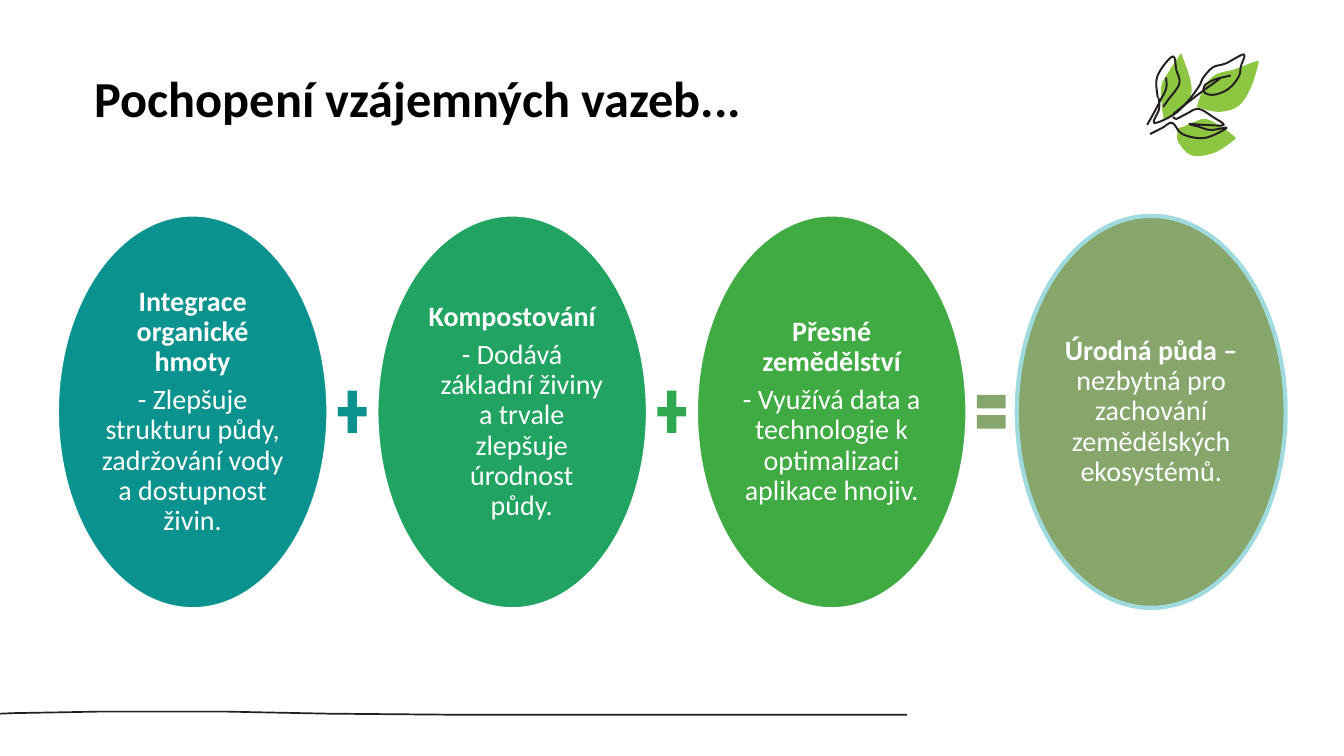
from lxml import etree
from pptx import Presentation
from pptx.dml.color import RGBColor
from pptx.enum.shapes import MSO_SHAPE
from pptx.enum.text import MSO_ANCHOR, PP_ALIGN
from pptx.oxml.ns import qn
from pptx.util import Pt

FONT = "Calibri"
INK = "231F20"
LEAF_GREEN = "8DC641"
WHITE = "FFFFFF"
FIRST_LEFT, STEP = 41.6, 228.24

FACTORS = [
    ("0A938E", WHITE, 1, [
        [("Integrace organické hmoty", True)],
        [("- Zlepšuje strukturu půdy, zadržování vody a dostupnost živin.", False)],
    ]),
    ("21A362", WHITE, 1, [
        [("Kompostování", True)],
        [("- Dodává základní živiny a trvale zlepšuje úrodnost půdy.", False)],
    ]),
    ("40AB43", WHITE, 1, [
        [("Přesné zemědělství", True)],
        [("- Využívá data a technologie k optimalizaci aplikace hnojiv.", False)],
    ]),
    ("86A66B", "9FDADF", 3, [
        [("Úrodná půda – ", True), ("nezbytná pro zachování zemědělských ekosystémů.", False)],
    ]),
]
INDENTED_FACTOR = 1

OPERATORS = [
    (MSO_SHAPE.MATH_PLUS, "0A938E"),
    (MSO_SHAPE.MATH_PLUS, "2FA850"),
    (MSO_SHAPE.MATH_EQUAL, "86A66B"),
]

LEAVES = [
    [(834.5, 84.2), (851, 67), (844.6, 40.3), (841.7, 41), (834.5, 51.8),
     (829.4, 62.6), (830.9, 82.8), (832.3, 85)],
    [(884.9, 75.6), (893.5, 62.6), (898.6, 46.1), (897.1, 43.9), (881.3, 49.7),
     (868.3, 53.3), (860.4, 61.9), (855.4, 74.9), (856.8, 77), (871.2, 79.9)],
    [(881.3, 100.1), (881.3, 97.2), (870.5, 89.3), (861.1, 85), (853.2, 87.1),
     (844.6, 90.7), (841, 92.2), (841, 95), (841.7, 101.5), (851, 110.9),
     (866.9, 109.3)],
]

TWIG_STROKES = [
    [(827, 69.8), (826, 57.6), (830.2, 48.2), (838.1, 40.3), (840.2, 49.7),
     (842.4, 59.8), (834.5, 71.3), (830.9, 76.3)],
    [(833, 55.4), (833, 63.4), (828.7, 72), (826.6, 76.3), (819.4, 89.3)],
    [(827.6, 69.8), (828, 77.8), (824.4, 87.8), (838.1, 82.1), (848.2, 72.7),
     (856.8, 61.2), (859, 56.2), (866.2, 48.2), (875.5, 45.4), (888.5, 38.9),
     (886.3, 47.5), (884.9, 54.7), (877.7, 63.4), (867.6, 67.7), (860.4, 66.2),
     (860.4, 61.2), (867.6, 56.9), (879.1, 54)],
    [(838.1, 81.4), (848.2, 73.4), (860.4, 64.1), (871.2, 56.5)],
    [(838.1, 83.5), (840.2, 85), (847.4, 81.4), (856.1, 77.8), (866.2, 83.5),
     (874.1, 89.3), (861.1, 89.3), (849.6, 88.6), (856.8, 90.7), (864.7, 92.9),
     (876.2, 91.4), (860.4, 98.6), (844.6, 95.8), (837.4, 87.8), (830.2, 91.4),
     (821.5, 95.8)],
]

GROUND_TOP = [(0, 509.2), (10, 508.8), (72, 507.7), (160.6, 507.7),
              (235, 509.2), (319, 509.9), (648, 509.9)]
GROUND_THICKNESS = 1.2


def color(value):
    return RGBColor.from_string(value)


def paint(shape, fill=None, line=None, width=1):
    shape.shadow.inherit = False
    if fill:
        shape.fill.solid()
        shape.fill.fore_color.rgb = color(fill)
    else:
        shape.fill.background()
    if line:
        shape.line.color.rgb = color(line)
        shape.line.width = Pt(width)
    else:
        shape.line.fill.background()


def style_span(span, size, value, bold):
    span.font.name = FONT
    span.font.size = Pt(size)
    span.font.bold = bold
    span.font.color.rgb = color(value)


def add_outline(page, contours):
    contours = [[(Pt(x), Pt(y)) for x, y in points] for points in contours]
    builder = page.shapes.build_freeform(*contours[0][0])
    for number, (start, *rest) in enumerate(contours):
        if number:
            builder.move_to(*start)
        builder.add_line_segments(rest, close=rest[-1] == start)
    return builder.convert_to_shape()


def bend_contour(segments):
    points = [(int(s[0].get("x")), int(s[0].get("y"))) for s in segments]
    closed = points[0] == points[-1]
    before, after = (points[-2], points[1]) if closed else (points[0], points[-1])
    guides = [before, *points, after]
    for segment, a, b, c, d in zip(segments[1:], guides, guides[1:], guides[2:], guides[3:]):
        leaving = [q + (r - p) / 6 for p, q, r in zip(a, b, c)]
        arriving = [q - (r - p) / 6 for p, q, r in zip(b, c, d)]
        curve = etree.Element(qn("a:cubicBezTo"))
        for x, y in (leaving, arriving, c):
            etree.SubElement(curve, qn("a:pt"), x=str(round(x)), y=str(round(y)))
        segment.getparent().replace(segment, curve)


def bend(shape):
    contours = []
    for segment in shape._element.iter(qn("a:moveTo"), qn("a:lnTo")):
        if segment.tag == qn("a:moveTo"):
            contours.append([])
        contours[-1].append(segment)
    for contour in contours:
        bend_contour(contour)


def add_ground(page):
    bottom = [(x, y + GROUND_THICKNESS) for x, y in reversed(GROUND_TOP)]
    paint(add_outline(page, [GROUND_TOP + bottom + GROUND_TOP[:1]]), INK)


def add_twig(page):
    for leaf in LEAVES:
        shape = add_outline(page, [leaf + leaf[:1]])
        bend(shape)
        paint(shape, LEAF_GREEN)
    twig = add_outline(page, TWIG_STROKES)
    bend(twig)
    paint(twig, line=INK, width=1.4)


def add_title(page, text):
    box = page.shapes.add_textbox(Pt(60.5), Pt(44.6), Pt(601), Pt(51))
    frame = box.text_frame
    frame.word_wrap = True
    frame.text = text
    style_span(frame.paragraphs[0].runs[0], 36, "000000", True)


def add_factor(page, index, fill, line, width, paragraphs):
    ellipse = page.shapes.add_shape(
        MSO_SHAPE.OVAL, Pt(FIRST_LEFT + index * STEP), Pt(154.2), Pt(192), Pt(280))
    paint(ellipse, fill, line, width)
    frame = ellipse.text_frame
    frame.word_wrap = True
    frame.vertical_anchor = MSO_ANCHOR.MIDDLE
    frame.margin_left = frame.margin_right = Pt(1.4)
    frame.margin_top = frame.margin_bottom = Pt(1.4)
    for number, pieces in enumerate(paragraphs):
        para = frame.add_paragraph() if number else frame.paragraphs[0]
        para.alignment = PP_ALIGN.CENTER
        para.line_spacing = 0.9
        if number:
            para.space_before = Pt(5.6)
            if index == INDENTED_FACTOR:
                para.level = 1
                properties = para._p.get_or_add_pPr()
                properties.set("marL", str(Pt(13.7)))
                properties.set("indent", str(Pt(-13.7)))
        for text, bold in pieces:
            span = para.add_run()
            span.text = text
            style_span(span, 20, WHITE, bold)


def add_operator(page, index, kind, fill):
    sign = page.shapes.add_shape(
        kind, Pt(237.6 + index * STEP), Pt(273.6), Pt(28), Pt(41))
    sign.adjustments[0] = 0.235
    paint(sign, fill)


def main():
    deck = Presentation()
    deck.slide_width, deck.slide_height = Pt(960), Pt(540)
    page = deck.slides.add_slide(deck.slide_layouts[6])
    add_ground(page)
    for index, factor in enumerate(FACTORS):
        add_factor(page, index, *factor)
    for index, operator in enumerate(OPERATORS):
        add_operator(page, index, *operator)
    add_title(page, "Pochopení vzájemných vazeb...")
    add_twig(page)
    deck.save("out.pptx")


if __name__ == "__main__":
    main()
